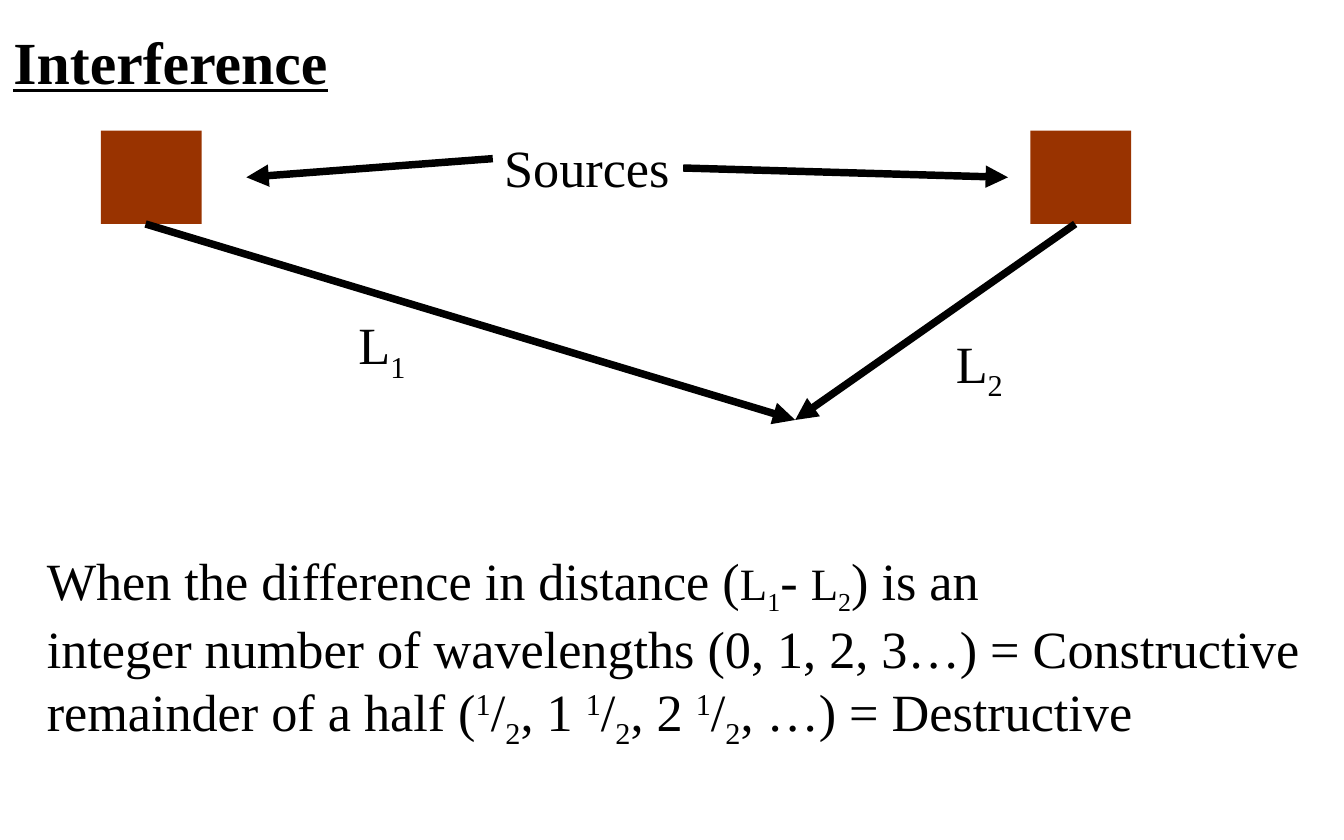
from dataclasses import dataclass
from lxml.etree import SubElement
from pptx import Presentation
from pptx.dml.color import RGBColor
from pptx.enum.shapes import MSO_CONNECTOR, MSO_SHAPE
from pptx.enum.text import MSO_ANCHOR, MSO_AUTO_SIZE, PP_ALIGN
from pptx.oxml.ns import qn
from pptx.util import Pt


@dataclass(frozen=True)
class Theme:
    """Colours, font and type sizes of the slide."""
    ink: RGBColor = RGBColor(0, 0, 0)
    source: RGBColor = RGBColor(0x99, 0x33, 0x00)
    font: str = "Times New Roman"
    title: int = 32
    body: int = 28
    small: int = 24
    line: int = 4


THEME = Theme()
SUB, SUP = -25000, 30000
HALF = [("1", SUP), ("/",), ("2", SUB)]
RULES = [
    [("When the difference in distance (",), ("L", 0, THEME.small),
     ("1", SUB, THEME.small), ("- ",), ("L", 0, THEME.small),
     ("2", SUB, THEME.small), (") is an",)],
    [("integer number of wavelengths (0, 1, 2, 3…) = Constructive",)],
    [("remainder of a half (",), *HALF, (", 1 ",), *HALF, (", 2 ",), *HALF,
     (", …) = Destructive",)],
]


def set_all(obj, values):
    """Set each named attribute of an object."""
    for name, value in values.items():
        setattr(obj, name, value)


def add_run(p, text, base=0, size=THEME.body, **extra):
    """Add one run in the theme font, raised or lowered by base."""
    r = p.add_run()
    r.text = text
    set_all(r.font, {"name": THEME.font, "size": Pt(size), **extra})
    r.font.color.rgb = THEME.ink
    if base:
        r.font._element.set("baseline", str(base))


def add_text(s, box, lines, wrap=False):
    """Add a text box with one paragraph for each list of runs."""
    tf = s.shapes.add_textbox(*map(Pt, box)).text_frame
    tf.word_wrap = wrap
    for i, runs in enumerate(lines):
        p = tf.paragraphs[0] if i == 0 else tf.add_paragraph()
        for run in runs:
            add_run(p, *run)


def add_arrow(s, start, end):
    """Draw a thick arrow from start to end."""
    cxn = s.shapes.add_connector(MSO_CONNECTOR.STRAIGHT, *map(Pt, (*start, *end)))
    cxn.line.width = Pt(THEME.line)
    cxn.line.color.rgb = THEME.ink
    SubElement(cxn.line._get_or_add_ln(), qn("a:tailEnd"), type="triangle")
    SubElement(cxn._element.spPr, qn("a:effectLst"))


def add_title(s, box, text):
    """Place and format the title placeholder."""
    sp = s.shapes.title
    set_all(sp, dict(zip(("left", "top", "width", "height"), map(Pt, box))))
    tf = sp.text_frame
    set_all(tf, {"word_wrap": False, "auto_size": MSO_AUTO_SIZE.NONE,
                 "vertical_anchor": MSO_ANCHOR.TOP})
    p = tf.paragraphs[0]
    p.alignment = PP_ALIGN.LEFT
    add_run(p, text, size=THEME.title, bold=True, underline=True)


def add_diagram(s, box):
    """Draw two sources whose paths meet at one point, with labels."""
    x, y, w, h = box
    side, tall = 54, 50
    meet = (x + 372, y + h)
    for left, foot in ((x, 24), (x + w - side, 24)):
        sp = s.shapes.add_shape(MSO_SHAPE.RECTANGLE, Pt(left), Pt(y), Pt(side), Pt(tall))
        sp.shadow.inherit = False
        sp.fill.solid()
        sp.fill.fore_color.rgb = THEME.source
        sp.line.fill.background()
        add_arrow(s, (left + foot, y + tall), meet)
    for number, dx, dy in (("1", 131, 94), ("2", 451, 104)):
        add_text(s, (x + dx, y + dy, 41, 41), [[("L",), (number, SUB)]])
    add_text(s, (x + 209, y - 1, 104, 41), [[("Sources",)]])
    add_arrow(s, (x + 210, y + 15), (x + 78, y + 25))
    add_arrow(s, (x + 312, y + 20), (x + 486, y + 25))


def main():
    """Build the interference slide and save it."""
    prs = Presentation()
    set_all(prs, {"slide_width": Pt(720), "slide_height": Pt(450)})
    s = prs.slides.add_slide(prs.slide_layouts[5])
    add_title(s, (0, 9.5, 184, 46), "Interference")
    add_diagram(s, (54, 70, 552, 155))
    add_text(s, (18, 290, 702, 109), RULES, wrap=True)
    prs.save("out.pptx")


if __name__ == "__main__":
    main()
